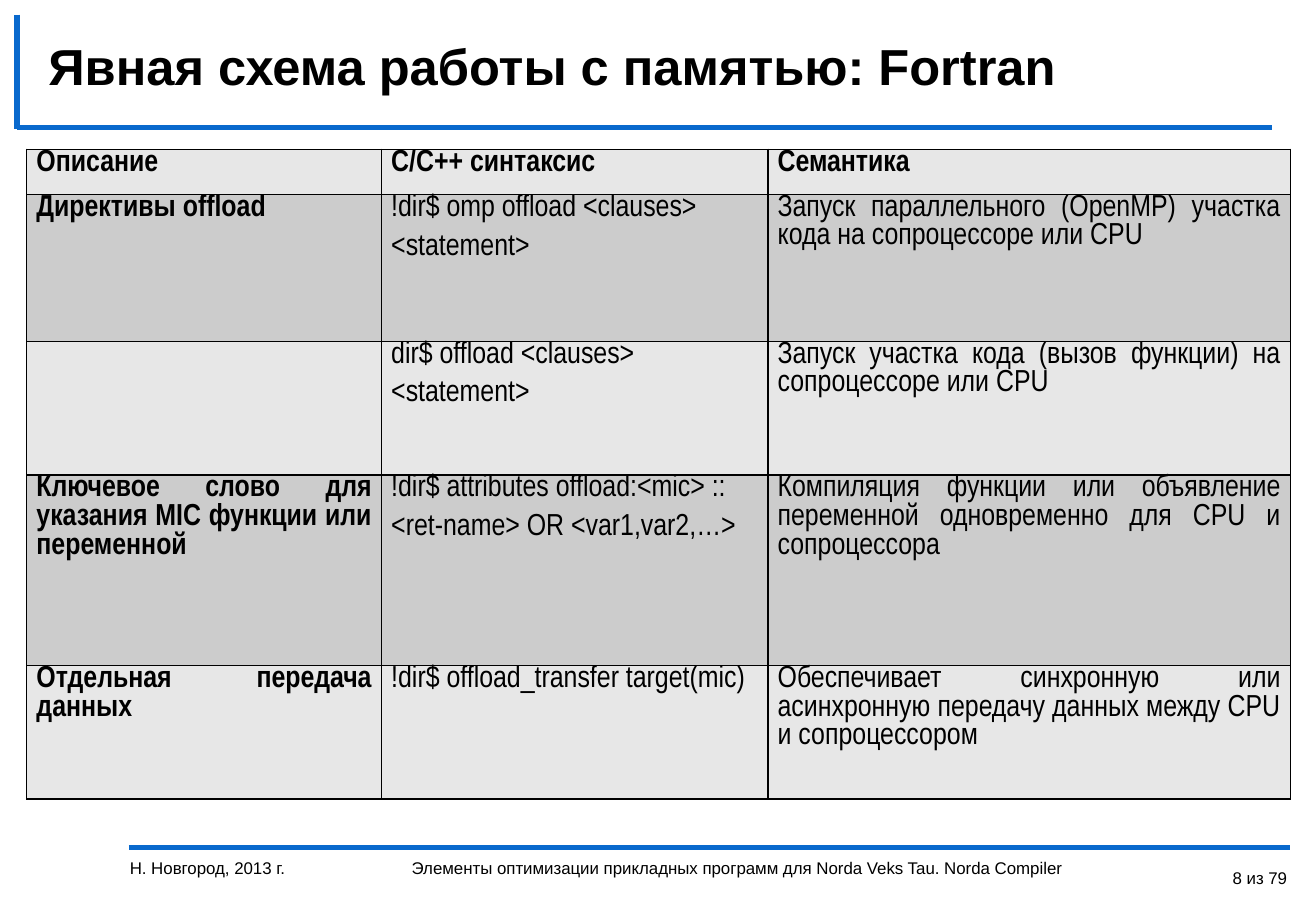
from pptx import Presentation
from pptx import util as u
from pptx.dml.color import RGBColor
from pptx.enum import shapes, text
from pptx.oxml.ns import qn
from lxml import etree

COLORS = {"ink": "000000", "rule": "0969CD", "light": "E7E7E7", "dark": "CCCCCC"}
ALIGN = text.PP_ALIGN
COLUMN_WIDTHS = [2.92, 3.18, 4.3]
ROW_HEIGHTS = [0.37, 1.21, 1.1, 1.57, 1.1]
ROWS = [
    ["Описание", "C/C++ синтаксис", "Семантика"],
    ["Директивы offload", "!dir$ omp offload <clauses>\n<statement>",
     "Запуск параллельного (OpenMP) участка кода на сопроцессоре или CPU"],
    ["", "dir$ offload <clauses>\n<statement>",
     "Запуск участка кода (вызов функции) на сопроцессоре или CPU"],
    ["Ключевое слово для указания MIC функции или переменной",
     "!dir$ attributes offload:<mic> ::\n<ret-name> OR <var1,var2,…>",
     "Компиляция функции или объявление переменной одновременно для CPU и сопроцессора"],
    ["Отдельная передача данных", "!dir$ offload_transfer target(mic)",
     "Обеспечивает синхронную или асинхронную передачу данных между CPU и сопроцессором"],
]
RULES = [(1.06, 6.98, 10.62, 6.98), (0.14, 1.05, 10.47, 1.05), (0.14, 0.12, 0.14, 1.06)]


def color(name):
    return RGBColor.from_string(COLORS[name])


def assign(target, values):
    for name, value in values.items():
        setattr(target, name, value)


class Page:
    def __init__(self, deck):
        self.slide = deck.slides.add_slide(deck.slide_layouts[6])

    def fill_text(self, frame, words, font, layout):
        """Fill a text frame, one paragraph per line of words."""
        for index, line in enumerate(words.split("\n")):
            para = frame.add_paragraph() if index else frame.paragraphs[0]
            assign(para, layout)
            span = para.add_run()
            span.text = line
            assign(span.font, font)
            span.font.color.rgb = color("ink")

    def label(self, place, words, size=10, bold=False, anchor=text.MSO_ANCHOR.TOP, **layout):
        box = self.slide.shapes.add_textbox(*map(u.Inches, place))
        assign(box.text_frame, {"word_wrap": True, "vertical_anchor": anchor})
        font = {"name": "Arial", "size": u.Pt(size), "bold": bold}
        self.fill_text(box.text_frame, words, font, layout)

    def rule(self, ends):
        line = self.slide.shapes.add_connector(
            shapes.MSO_CONNECTOR.STRAIGHT, *map(u.Inches, ends))
        line.line.color.rgb = color("rule")
        line.line.width = u.Pt(3)
        etree.SubElement(line._element.spPr, qn("a:effectLst"))

    def border(self, cell):
        properties = cell._tc.get_or_add_tcPr()
        for index, side in enumerate(("a:lnL", "a:lnR", "a:lnT", "a:lnB")):
            edge = etree.Element(qn(side), w=str(u.Pt(1)))
            fill = etree.SubElement(edge, qn("a:solidFill"))
            etree.SubElement(fill, qn("a:srgbClr"), val=COLORS["ink"])
            properties.insert(index, edge)

    def table(self, left, top):
        size = (sum(COLUMN_WIDTHS), sum(ROW_HEIGHTS))
        table = self.slide.shapes.add_table(
            len(ROWS), len(COLUMN_WIDTHS), *map(u.Inches, (left, top, *size))).table
        for column, width in zip(table.columns, COLUMN_WIDTHS):
            column.width = u.Inches(width)
        for row, height in zip(table.rows, ROW_HEIGHTS):
            row.height = u.Inches(height)
        margins = {"margin_left": u.Inches(0.08), "margin_right": u.Inches(0.08),
                   "margin_top": 0, "margin_bottom": 0}
        for r, row in enumerate(ROWS):
            for c, words in enumerate(row):
                cell = table.cell(r, c)
                assign(cell, margins)
                cell.fill.solid()
                cell.fill.fore_color.rgb = color("dark" if r % 2 else "light")
                self.border(cell)
                if words:
                    font = {"name": "Arial Narrow", "size": u.Pt(18),
                            "bold": r == 0 or c == 0}
                    is_directive = c == 1 and r in (1, 2)
                    align = ALIGN.LEFT if is_directive else ALIGN.JUSTIFY
                    self.fill_text(cell.text_frame, words, font,
                                   {"alignment": align, "space_after": u.Pt(6)})


def main():
    deck = Presentation()
    deck.slide_width, deck.slide_height = u.Inches(10.83), u.Inches(7.5)
    page = Page(deck)
    for ends in RULES:
        page.rule(ends)
    page.label((0.3, 0.23, 9.93, 0.61), "Явная схема работы с памятью: Fortran",
               size=30, bold=True, anchor=text.MSO_ANCHOR.MIDDLE)
    page.label((3.29, 7.01, 6.3, 0.49),
               "Элементы оптимизации прикладных программ для Norda Veks Tau. Norda Compiler")
    page.table(0.22, 1.23)
    page.label((0.97, 7.01, 2.24, 0.49), "Н. Новгород, 2013 г.")
    page.label((9.67, 7.01, 1.02, 0.49), "8 из 79", alignment=ALIGN.RIGHT, line_spacing=1.5)
    deck.save("out.pptx")


if __name__ == "__main__":
    main()
